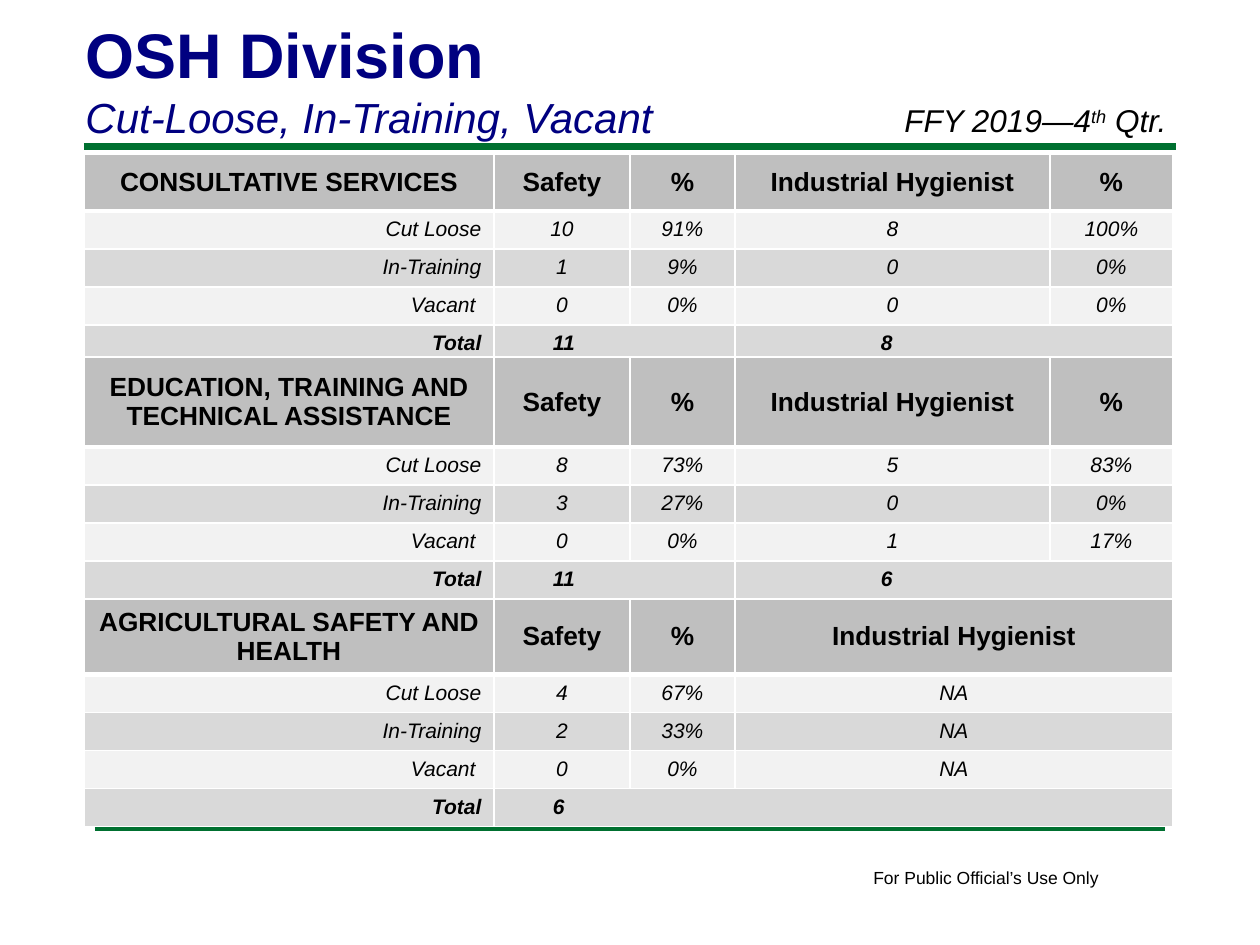
from dataclasses import dataclass

from lxml.etree import SubElement
from pptx import Presentation
from pptx.dml.color import RGBColor
from pptx.enum.shapes import MSO_CONNECTOR
from pptx.enum.text import MSO_ANCHOR, PP_ALIGN
from pptx.oxml.ns import qn
from pptx.util import Emu, Pt

PIXELS_PER_INCH = 126
FONT = "Arial"
COLORS = {
    "navy": "000080", "green": "007030", "black": "000000", "white": "FFFFFF",
    "header": "BFBFBF", "light": "F2F2F2", "dark": "D9D9D9",
}
TABLE_LEFT = 84
ROW_HEIGHT = 38
COLUMNS = (410, 136, 105, 315, 123)
MERGED_COLUMNS = COLUMNS[:3] + (sum(COLUMNS[3:]),)
LABELS = ("Cut Loose", "In-Training", "Vacant ")


@dataclass(frozen=True)
class Total:
    text: str
    first_column: int
    last_column: int
    inset: int


@dataclass(frozen=True)
class StaffTable:
    name: str
    top: int
    header_height: int
    columns: tuple[int, ...]
    headings: tuple[str, ...]
    values: tuple[tuple[str, ...], ...]
    totals: tuple[Total, ...]
    body_anchor: MSO_ANCHOR = MSO_ANCHOR.TOP


@dataclass(frozen=True)
class Rule:
    left: int
    right: int
    y: int
    weight: int


FULL_HEADINGS = ("Safety", "%", "Industrial Hygienist", "%")
TABLES = (
    StaffTable(
        "CONSULTATIVE SERVICES", 154, 57, COLUMNS, FULL_HEADINGS,
        (("10", "91%", "8", "100%"), ("1", "9%", "0", "0%"), ("0", "0%", "0", "0%")),
        (Total("11", 1, 2, 59), Total("8", 3, 4, 146)),
    ),
    StaffTable(
        "AGRICULTURAL SAFETY AND HEALTH", 599, 75, MERGED_COLUMNS, FULL_HEADINGS[:3],
        (("4", "67%", "NA"), ("2", "33%", "NA"), ("0", "0%", "NA")),
        (Total("6", 1, 3, 59),), MSO_ANCHOR.MIDDLE,
    ),
    StaffTable(
        "EDUCATION, TRAINING AND TECHNICAL ASSISTANCE", 357, 90, COLUMNS, FULL_HEADINGS,
        (("8", "73%", "5", "83%"), ("3", "27%", "0", "0%"), ("0", "0%", "1", "17%")),
        (Total("11", 1, 2, 59), Total("6", 3, 4, 146)),
    ),
)
RULES = (Rule(84, 1176, 147, 4), Rule(95, 1165, 829, 2))


def px(length: int) -> Emu:
    return Emu(round(length * 914400 / PIXELS_PER_INCH))


def color(name: str) -> RGBColor:
    return RGBColor.from_string(COLORS[name])


def format_runs(paragraph, size: int, color_name="black", bold=False, italic=False) -> None:
    for run in paragraph.runs:
        font = run.font
        font.name, font.size = FONT, Pt(size)
        font.bold, font.italic = bold, italic
        font.color.rgb = color(color_name)


def set_borders(cell, top: int, bottom: int) -> None:
    """Give a cell white borders; top and bottom weights are in points."""
    properties = cell._tc.get_or_add_tcPr()
    for tag, weight in (("lnL", 1), ("lnR", 1), ("lnT", top), ("lnB", bottom)):
        line = SubElement(properties, qn(f"a:{tag}"), w=str(Pt(weight)))
        fill = SubElement(line, qn("a:solidFill"))
        SubElement(fill, qn("a:srgbClr"), val=COLORS["white"])


def fill_cell(cell, text: str, row: int, alignment: PP_ALIGN, anchor: MSO_ANCHOR,
              bold: bool) -> None:
    is_header = row == 0
    set_borders(cell, top=3 if row == 1 else 1, bottom=3 if is_header else 1)
    cell.fill.solid()
    cell.fill.fore_color.rgb = color("header" if is_header else ("dark", "light")[row % 2])
    cell.vertical_anchor = MSO_ANCHOR.MIDDLE if is_header else anchor
    cell.text_frame.text = text
    paragraph = cell.text_frame.paragraphs[0]
    paragraph.alignment = alignment
    format_runs(paragraph, 15 if is_header else 12, bold=bold, italic=not is_header)


def add_staff_table(slide, data: StaffTable) -> None:
    rows = [(data.name, *data.headings)]
    rows += [(label, *values) for label, values in zip(LABELS, data.values)]
    total_row = len(rows)
    heights = [data.header_height] + [ROW_HEIGHT] * total_row
    table = slide.shapes.add_table(
        len(heights), len(data.columns), px(TABLE_LEFT), px(data.top),
        px(sum(data.columns)), px(sum(heights)),
    ).table
    table.first_row = table.horz_banding = False
    for column, width in zip(table.columns, data.columns):
        column.width = px(width)
    for table_row, height in zip(table.rows, heights):
        table_row.height = px(height)

    for row, texts in enumerate(rows):
        for column, text in enumerate(texts):
            is_label = row > 0 and column == 0
            alignment = PP_ALIGN.RIGHT if is_label else PP_ALIGN.CENTER
            fill_cell(table.cell(row, column), text, row, alignment,
                      data.body_anchor, bold=row == 0)
    fill_cell(table.cell(total_row, 0), "Total", total_row, PP_ALIGN.RIGHT,
              data.body_anchor, bold=True)
    for total in data.totals:
        cell = table.cell(total_row, total.first_column)
        cell.merge(table.cell(total_row, total.last_column))
        cell.margin_left = px(total.inset)
        fill_cell(cell, total.text, total_row, PP_ALIGN.LEFT, data.body_anchor, bold=True)


def add_rule(slide, rule: Rule) -> None:
    connector = slide.shapes.add_connector(
        MSO_CONNECTOR.STRAIGHT, px(rule.left), px(rule.y), px(rule.right), px(rule.y))
    connector.line.color.rgb = color("green")
    connector.line.width = Pt(rule.weight)
    SubElement(connector._element.spPr, qn("a:effectLst"))


def add_text(slide, left: int, top: int, width: int, height: int, text: str, wrap=True):
    """Add a text box and return its text frame."""
    text_frame = slide.shapes.add_textbox(px(left), px(top), px(width), px(height)).text_frame
    text_frame.word_wrap = wrap
    text_frame.text = text
    return text_frame


def add_title(slide) -> None:
    title = add_text(slide, 73, 8, 1040, 140, "OSH Division\nCut-Loose, In-Training, Vacant")
    title.vertical_anchor = MSO_ANCHOR.BOTTOM
    heading, subtitle = title.paragraphs
    format_runs(heading, 36, "navy", bold=True)
    format_runs(subtitle, 24, "navy", italic=True)


def add_quarter(slide) -> None:
    paragraph = add_text(slide, 892, 95, 315, 50, "FFY 2019—4").paragraphs[0]
    ordinal = paragraph.add_run()
    ordinal.text = "th"
    paragraph.add_run().text = " Qtr."
    format_runs(paragraph, 18, italic=True)
    ordinal.font._element.set("baseline", "30000")


def main() -> None:
    presentation = Presentation()
    presentation.slide_width, presentation.slide_height = px(1260), px(945)
    slide = presentation.slides.add_slide(presentation.slide_layouts[6])
    for rule in RULES:
        add_rule(slide, rule)
    footer = add_text(slide, 861, 861, 253, 34, "For Public Official’s Use Only", wrap=False)
    format_runs(footer.paragraphs[0], 10)
    add_title(slide)
    for table in TABLES:
        add_staff_table(slide, table)
    add_quarter(slide)
    presentation.save("out.pptx")


if __name__ == "__main__":
    main()
